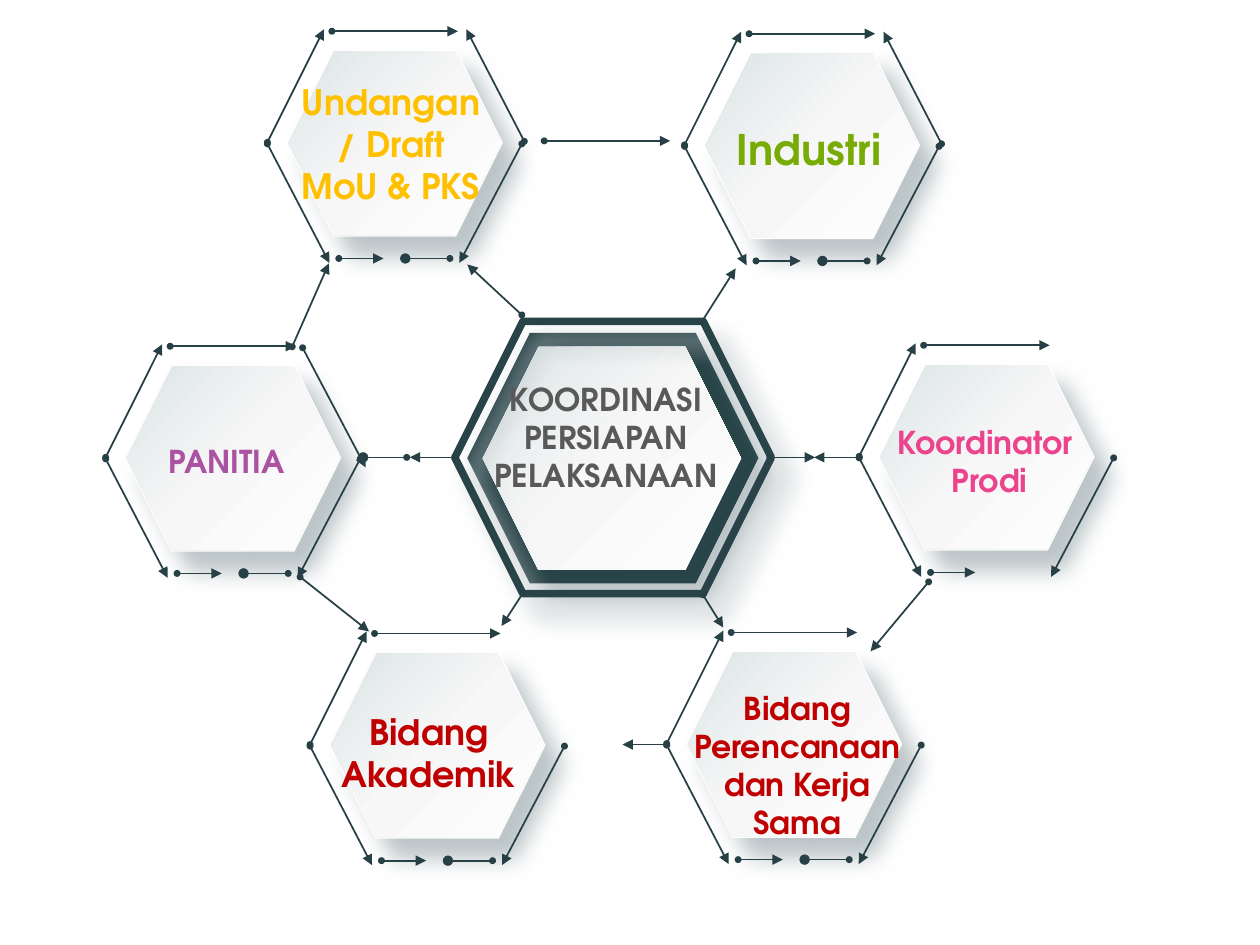
from typing import NamedTuple

from lxml import etree
from pptx import Presentation
from pptx.dml.color import RGBColor
from pptx.enum import shapes, text
from pptx.oxml.ns import qn
from pptx.util import Cm, Pt

FONT = "TeX Gyre Adventor"
COLORS = {
    "white": "FFFFFF", "line": "274045", "frame": "294449", "shadow": "BCC5C8",
    "purple": "AB52A2", "amber": "FFC000", "pink": "EB448C",
    "red": "C00000", "green": "78AB06", "gray": "595959",
}
GRADIENT = [(0, "DCE4E5"), (50, "F7F7F7"), (100, "FFFFFF")]


class Box(NamedTuple):
    left: float
    top: float
    width: float
    height: float


class Arrow(NamedTuple):
    """An arrow with its head at the start and a small dot at the end."""
    x1: float
    y1: float
    x2: float
    y2: float
    head: str = "triangle"


class Label(NamedTuple):
    box: Box
    paragraphs: list[str]
    size: int
    color: str


class Node(NamedTuple):
    left: float
    top: float
    ring: list[str]
    label: Label


# Arrows around a node, measured from the corner of its hexagon
RING = {
    "top": Arrow(3.46, -0.36, 0.92, -0.36),
    "bottom left": Arrow(1.96, 4.22, 1.06, 4.22),
    "lower left": Arrow(0.87, 4.31, -0.38, 1.91),
    "upper left": Arrow(0.76, -0.4, -0.38, 1.88),
    "lower right": Arrow(3.49, 4.31, 4.75, 1.91),
    "bottom right": Arrow(2.4, 4.22, 3.3, 4.22, "oval"),
    "upper right": Arrow(3.63, -0.4, 4.8, 1.86),
}
FULL_RING = list(RING)
OPEN_RING = FULL_RING[:6]
SHORT_RING = FULL_RING[:5]

NODES = [
    Node(5.77, 0.99, FULL_RING, Label(
        Box(5.77, 1.5, 4.22, 2.82), ["Undangan/ Draft MoU & PKS"], 20, "amber")),
    Node(6.63, 13.13, OPEN_RING, Label(
        Box(6.5, 14.2, 4.29, 1.96), ["Bidang Akademik"], 20, "red")),
    Node(13.82, 13.11, OPEN_RING, Label(
        Box(13.51, 13.77, 5.13, 3.33), ["Bidang Perencanaan dan Kerja Sama"], 18, "red")),
    Node(2.51, 7.34, OPEN_RING, Label(
        Box(2.13, 8.79, 4.88, 1.02), ["PANITIA"], 18, "purple")),
    Node(17.7, 7.32, SHORT_RING, Label(
        Box(16.79, 8.41, 6.32, 1.8), ["Koordinator ", "Prodi"], 18, "pink")),
    Node(14.18, 1.04, FULL_RING, Label(
        Box(14.2, 2.36, 4.22, 1.27), ["Industri"], 24, "green")),
]

CENTER = Label(Box(9.6, 7.54, 5.23, 2.57),
               ["KOORDINASI", "PERSIAPAN PELAKSANAAN"], 18, "gray")

LINKS = [
    Arrow(12.55, 15.01, 13.44, 15.01),
    Arrow(16.41, 9.22, 17.32, 9.22),
    Arrow(7.32, 9.22, 8.2, 9.22, "oval"),
    Arrow(16.43, 9.22, 15.52, 9.22),
    Arrow(8.26, 9.22, 9.17, 9.22),
    Arrow(14.58, 12.65, 14.17, 11.99),
    Arrow(10.11, 12.62, 10.54, 11.96),
    Arrow(7.44, 12.73, 6.05, 11.63),
    Arrow(17.55, 13.13, 18.72, 11.73),
    Arrow(7.37, 9.42, 6.1, 7.01),
    Arrow(13.51, 2.84, 10.97, 2.84),
    Arrow(6.63, 5.31, 5.89, 6.99),
    Arrow(14.83, 5.41, 14.15, 6.48),
    Arrow(9.42, 5.33, 10.52, 6.35),
]


def rgb(name: str) -> RGBColor:
    return RGBColor.from_string(COLORS[name])


def add_hexagon(slide, box: Box):
    shape = slide.shapes.add_shape(shapes.MSO_SHAPE.HEXAGON, *map(Cm, box))
    shape.shadow.inherit = False
    shape.fill.background()
    shape.line.fill.background()
    return shape


def add_shadow(shape) -> None:
    effects = shape.element.spPr.find(qn("a:effectLst"))
    shadow = etree.SubElement(
        effects, qn("a:outerShdw"), blurRad=str(Pt(13)), dist=str(Pt(15)),
        dir=str(49 * 60000), algn="tl", rotWithShape="0")
    etree.SubElement(shadow, qn("a:srgbClr"), val=COLORS["shadow"])


def add_solid_hexagon(slide, box: Box, color: str) -> None:
    shape = add_hexagon(slide, box)
    shape.fill.solid()
    shape.fill.fore_color.rgb = rgb(color)
    add_shadow(shape)


def add_gradient_hexagon(slide, box: Box) -> None:
    shape = add_hexagon(slide, box)
    shape.fill.gradient()
    shape.fill.gradient_angle = 315
    stops = shape.element.spPr.find(qn("a:gradFill")).find(qn("a:gsLst"))
    for stop in list(stops):
        stops.remove(stop)
    for position, color in GRADIENT:
        stop = etree.SubElement(stops, qn("a:gs"), pos=str(position * 1000))
        etree.SubElement(stop, qn("a:srgbClr"), val=color)


def add_frame(slide, box: Box) -> None:
    shape = add_hexagon(slide, box)
    shape.line.color.rgb = rgb("frame")
    shape.line.width = Pt(4.33)
    add_shadow(shape)


def add_arrow(slide, arrow: Arrow, left: float = 0, top: float = 0) -> None:
    connector = slide.shapes.add_connector(
        shapes.MSO_CONNECTOR.STRAIGHT, Cm(left + arrow.x1), Cm(top + arrow.y1),
        Cm(left + arrow.x2), Cm(top + arrow.y2))
    connector.line.color.rgb = rgb("line")
    connector.line.width = Pt(1)
    properties = connector.element.spPr
    line = properties.find(qn("a:ln"))
    etree.SubElement(line, qn("a:headEnd"), type=arrow.head, w="med", len="med")
    etree.SubElement(line, qn("a:tailEnd"), type="oval", w="sm", len="sm")
    etree.SubElement(properties, qn("a:effectLst"))


def write_label(shape, label: Label) -> None:
    frame = shape.text_frame
    frame.word_wrap = True
    frame.auto_size = text.MSO_AUTO_SIZE.SHAPE_TO_FIT_TEXT
    frame.vertical_anchor = text.MSO_ANCHOR.TOP
    for index, words in enumerate(label.paragraphs):
        paragraph = frame.add_paragraph() if index else frame.paragraphs[0]
        paragraph.alignment = text.PP_ALIGN.CENTER
        run = paragraph.add_run()
        run.text = words
        run.font.name = FONT
        run.font.size = Pt(label.size)
        run.font.bold = True
        run.font.color.rgb = rgb(label.color)


def add_node(slide, node: Node) -> None:
    add_solid_hexagon(slide, Box(node.left, node.top, 4.37, 3.78), "white")
    add_gradient_hexagon(slide, Box(node.left + 0.04, node.top + 0.04, 4.29, 3.71))
    for side in node.ring:
        add_arrow(slide, RING[side], node.left, node.top)
    write_label(slide.shapes.add_textbox(*map(Cm, node.label.box)), node.label)


def add_center(slide) -> None:
    add_solid_hexagon(slide, Box(9.42, 6.71, 5.87, 5.05), "frame")
    add_gradient_hexagon(slide, Box(9.73, 6.99, 5.21, 4.5))
    add_frame(slide, Box(9.17, 6.48, 6.38, 5.49))
    title = slide.shapes.title
    title.left, title.top, title.width, title.height = map(Cm, CENTER.box)
    write_label(title, CENTER)
    title.element.getparent().append(title.element)  # bring above the hexagons


def main() -> None:
    presentation = Presentation()
    presentation.slide_width, presentation.slide_height = Cm(25.4), Cm(19.05)
    slide = presentation.slides.add_slide(presentation.slide_layouts[5])
    for node in NODES:
        add_node(slide, node)
    add_center(slide)
    for link in LINKS:
        add_arrow(slide, link)
    presentation.save("out.pptx")


if __name__ == "__main__":
    main()
